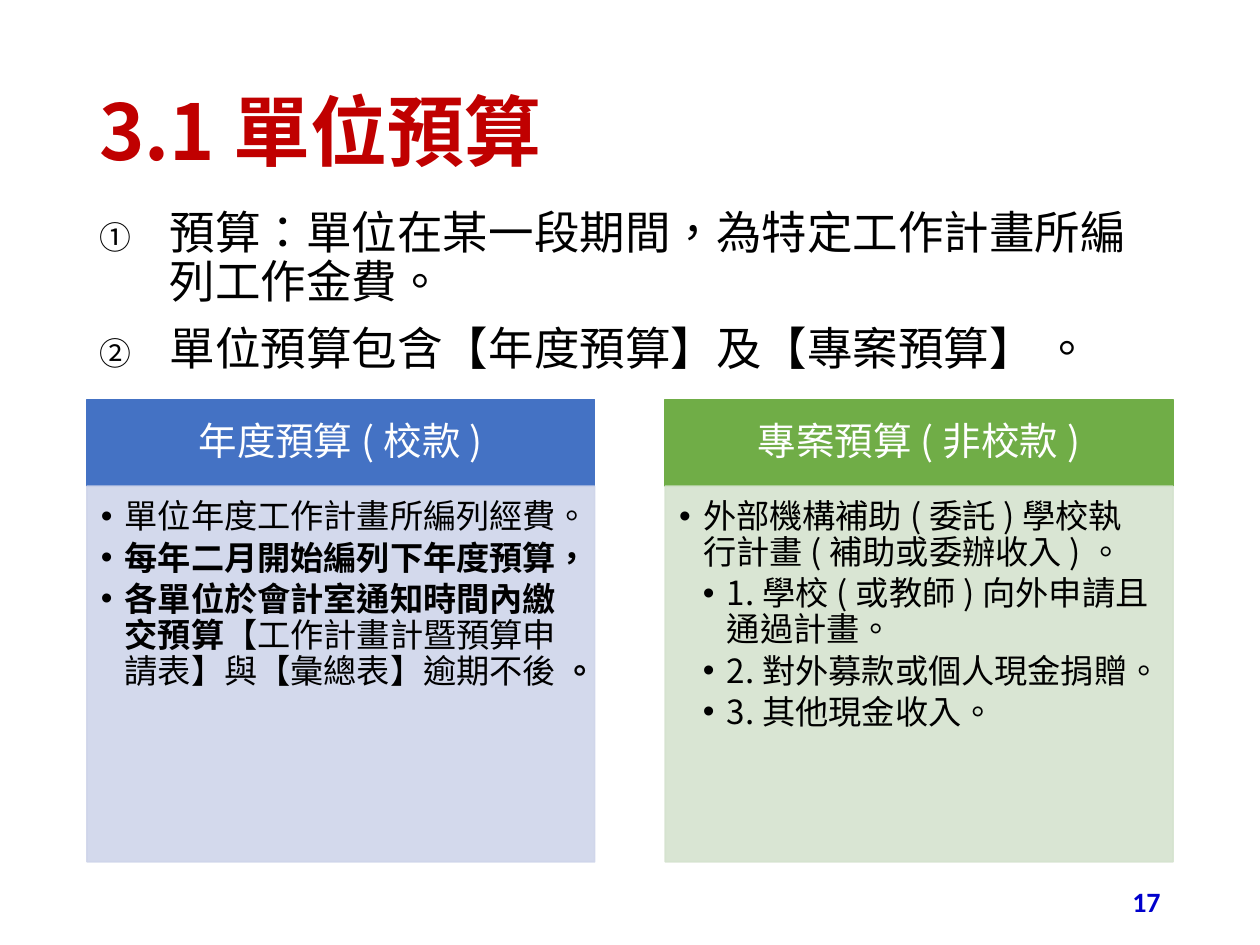
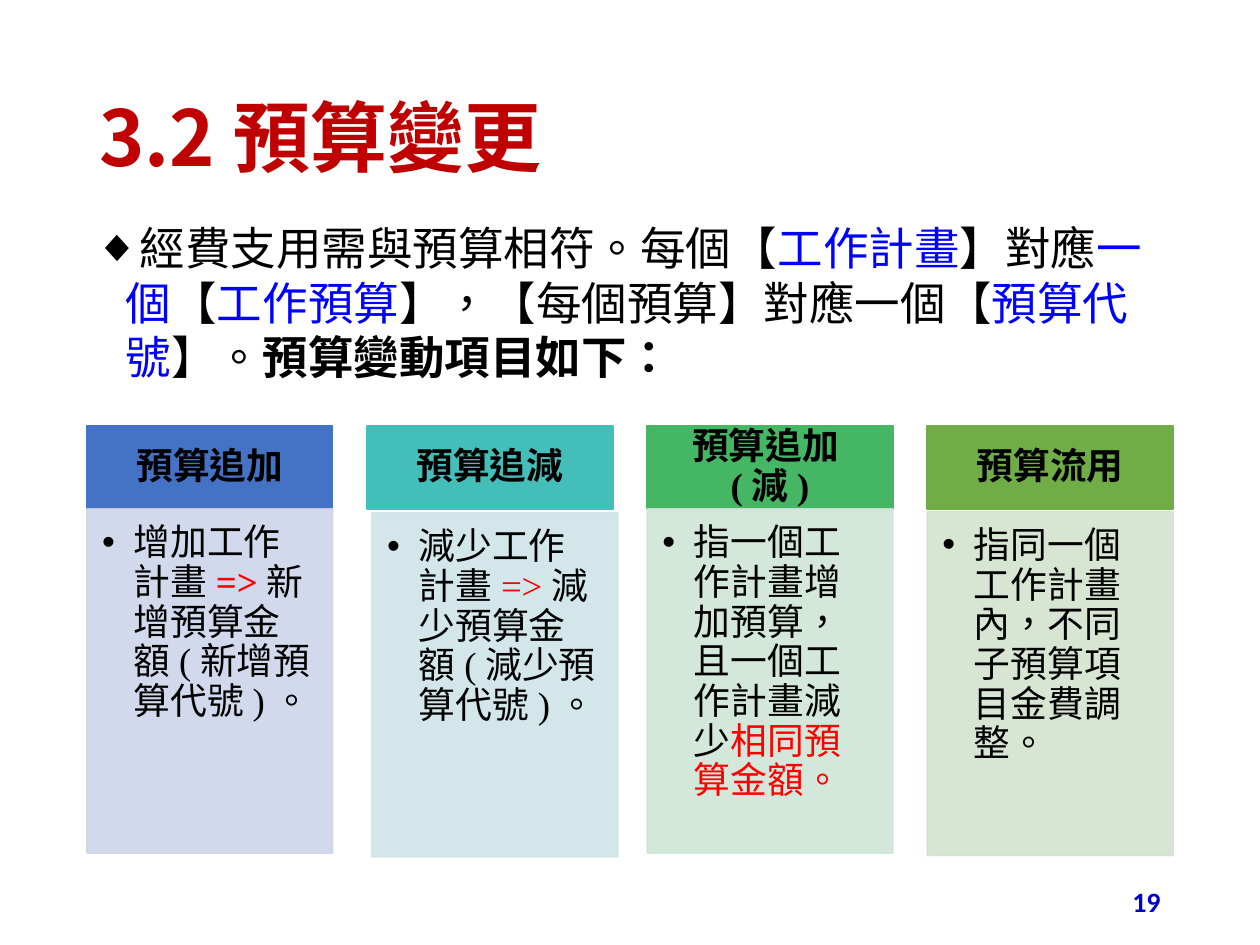
from dataclasses import dataclass

from lxml.etree import SubElement
from pptx import Presentation
from pptx.dml.color import RGBColor
from pptx.enum.lang import MSO_LANGUAGE_ID as Lang
from pptx.enum.shapes import MSO_SHAPE as Shape
from pptx.enum.text import MSO_ANCHOR as Anchor, PP_ALIGN as Align
from pptx.oxml.ns import qn
from pptx.util import Inches, Pt


@dataclass(frozen=True)
class Theme:
    cjk: str = "Noto Sans CJK SC"
    sans: str = "Arial"
    serif: str = "Times New Roman"
    number_font: str = "Calibri"
    title: str = "C00000"
    number: str = "0000CC"
    ink: str = "000000"
    white: str = "FFFFFF"
    term: str = "0000FF"
    alert: str = "FF0000"
    title_size: int = 44
    intro_size: int = 26
    number_size: int = 16
    left: float = 0.69
    width: float = 8.62


T = Theme()

# A run is plain text or (text, style); a style may set color, bold and font.
TERM = {"color": T.term}
ALERT = {"color": T.alert}
BOLD = {"bold": True}
OPEN = ("【", {"font": T.serif})
CLOSE = ("】", {"font": T.serif})

SLIDES = [
    {
        "title": "3.1單位預算", "title_top": 0.35, "number": "17",
        "intro": [
            ["預算：單位在某一段期間，為特定工作計畫所編列工作金費。"],
            ["單位預算包含【年度預算】及【專案預算】 。"],
        ],
        "intro_box": (0.69, 1.62, 8.62, 1.4),
        "intro_style": {"bullet": "circleNumWdWhitePlain", "indent": 0.56,
                        "spacing": 0.9, "before": 10},
        "cards": {
            "top": 3.17, "width": 4.03, "head_height": 0.69, "body_height": 2.98,
            "head_inset": (0.17, 0.1, 0.17, 0.1),
            "body_inset": (0.11, 0.11, 0.15, 0.17),
            "head_style": {"size": 22, "font": T.cjk, "color": T.white},
            "body_style": {"size": 19, "font": T.cjk, "indent": 0.19},
            "items": [
                {"head": "年度預算(校款)", "fill": "4472C4", "tint": "CFD5EA",
                 "body": [
                     (0, ["單位年度工作計畫所編列經費。"]),
                     (0, [("每年二月開始編列下年度預算，", BOLD)]),
                     (0, [("各單位於會計室通知時間內繳交預算", BOLD),
                          "【工作計畫計暨預算申請表】與【彙總表】逾期不後 ",
                          ("。", BOLD)]),
                 ]},
                {"head": "專案預算(非校款)", "fill": "70AD47", "tint": "D5E3CF",
                 "body": [
                     (0, ["外部機構補助(委託)學校執行計畫(補助或委辦收入)。"]),
                     (1, ["1.學校(或教師)向外申請且通過計畫。"]),
                     (1, ["2.對外募款或個人現金捐贈。"]),
                     (1, ["3.其他現金收入。"]),
                 ]},
            ],
        },
    },
    {
        "title": "3.2預算變更", "title_top": 0.4, "number": "19",
        "intro": [[
            "經費支用需與預算相符。每個", OPEN, ("工作計畫", TERM), CLOSE, "對應",
            ("一個", TERM), OPEN, ("工作預算", TERM), CLOSE, "，",
            OPEN, "每個預算", CLOSE, "對應一個",
            OPEN, ("預算代號", TERM), CLOSE, "。", ("預算變動項目如下：", BOLD),
        ]],
        "intro_box": (0.65, 1.7, 8.62, 1.26),
        "intro_style": {"bullet": "◆", "indent": 0.25, "after": 6},
        "cards": {
            "top": 3.38, "width": 1.95, "head_height": 0.66, "body_height": 2.73,
            "head_inset": (0.16, 0.09, 0.16, 0.09),
            "body_inset": (0.12, 0.12, 0.16, 0.18),
            "head_style": {"size": 21, "font": T.serif, "bold": True},
            "body_style": {"size": 21, "font": T.serif, "indent": 0.25},
            "items": [
                {"head": "預算追加", "fill": "4472C4", "tint": "CFD5EA",
                 "body": [(0, ["增加工作計畫", ("=>", ALERT | BOLD),
                               "新增預算金額(新增預算代號)。"])]},
                {"head": "預算追減", "fill": "43BEB9", "tint": "CFE5E8",
                 "nudge": (0.04, 0.03),
                 "body": [(0, ["減少工作計畫", ("=>", ALERT),
                               "減少預算金額(減少預算代號)。"])]},
                {"head": "預算追加(減)", "fill": "45B664", "tint": "CFE5D8",
                 "body": [(0, ["指一個工作計畫增加預算，且一個工作計畫減少",
                               ("相同預算金額。", ALERT)])]},
                {"head": "預算流用", "fill": "70AD47", "tint": "D5E3CF",
                 "nudge": (0, 0.02),
                 "body": [(0, ["指同一個工作計畫內，不同子預算項目金費調整。"])]},
            ],
        },
    },
]


def rgb(color):
    return RGBColor.from_string(color)


def add_bullet(paragraph, bullet, indent, level):
    props = paragraph._p.get_or_add_pPr()
    props.set("marL", str(Inches(indent * (level + 1))))
    props.set("indent", str(-Inches(indent)))
    if len(bullet) > 1:
        SubElement(props, qn("a:buSzPct")).set("val", "70000")
        SubElement(props, qn("a:buFont")).set("typeface", T.sans)
        SubElement(props, qn("a:buAutoNum")).set("type", bullet)
    else:
        SubElement(props, qn("a:buFont")).set("typeface", T.sans)
        SubElement(props, qn("a:buChar")).set("char", bullet)


def write(paragraph, runs, size, font, color=T.ink, bold=None, align=Align.LEFT,
          bullet=None, indent=0, level=0, spacing=None, before=0, after=0):
    if bullet:
        add_bullet(paragraph, bullet, indent, level)
    paragraph.level = level
    paragraph.alignment = align
    paragraph.line_spacing = spacing
    paragraph.space_before, paragraph.space_after = Pt(before), Pt(after)

    styles = [{} if isinstance(run, str) else run[1] for run in runs]
    if all(style.get("bold") for style in styles):
        bold = True
    base = paragraph.font
    base.size, base.name, base.bold = Pt(size), font, bold
    base.color.rgb = rgb(color)
    SubElement(base._element, qn("a:ea")).set("typeface", T.cjk)

    for content, style in zip(runs, styles):
        run = paragraph.add_run()
        run.text = content if isinstance(content, str) else content[0]
        run.font.language_id = Lang.TRADITIONAL_CHINESE
        if "font" in style:
            run.font.name = style["font"]
        if "color" in style:
            run.font.color.rgb = rgb(style["color"])
        if "bold" in style and not bold:
            run.font.bold = True


def fill_frame(frame, paragraphs, anchor=Anchor.TOP, inset=(0.1, 0.05, 0.1, 0.05)):
    """Write (runs, style) pairs into a text frame, one paragraph each."""
    frame.word_wrap = True
    frame.vertical_anchor = anchor
    (frame.margin_left, frame.margin_top,
     frame.margin_right, frame.margin_bottom) = map(Inches, inset)
    for i, (runs, style) in enumerate(paragraphs):
        paragraph = frame.add_paragraph() if i else frame.paragraphs[0]
        write(paragraph, runs, **(style if i else style | {"before": 0}))


def add_text(slide, box, paragraphs, anchor=Anchor.TOP):
    frame = slide.shapes.add_textbox(*map(Inches, box)).text_frame
    fill_frame(frame, paragraphs, anchor)


def add_panel(slide, box, color, opacity=100):
    panel = slide.shapes.add_shape(Shape.RECTANGLE, *map(Inches, box))
    panel.shadow.inherit = False
    panel.fill.solid()
    panel.fill.fore_color.rgb = panel.line.color.rgb = rgb(color)
    panel.line.width = Pt(1)
    if opacity < 100:
        for tone in list(panel._element.spPr.iter(qn("a:srgbClr"))):
            SubElement(tone, qn("a:alpha")).set("val", str(opacity * 1000))
    return panel.text_frame


def add_cards(slide, cards):
    items, width = cards["items"], cards["width"]
    pitch = (T.width - width) / (len(items) - 1)
    body_top = cards["top"] + cards["head_height"]
    head_style = cards["head_style"] | {"align": Align.CENTER, "spacing": 0.9}
    body_style = cards["body_style"] | {"bullet": "•", "spacing": 0.9, "after": 3}
    for i, card in enumerate(items):
        left = T.left + i * pitch
        dx, dy = card.get("nudge", (0, 0))
        head = add_panel(slide, (left, cards["top"], width, cards["head_height"]),
                         card["fill"])
        fill_frame(head, [([card["head"]], head_style)], Anchor.MIDDLE,
                   cards["head_inset"])
        body = add_panel(slide, (left + dx, body_top + dy, width, cards["body_height"]),
                         card["tint"], opacity=90)
        fill_frame(body, [(runs, body_style | {"level": level})
                          for level, runs in card["body"]],
                   inset=cards["body_inset"])


def add_slide(deck, content):
    slide = deck.slides.add_slide(deck.slide_layouts[6])
    title_style = {"size": T.title_size, "font": T.cjk, "color": T.title,
                   "bold": True, "spacing": 0.9}
    intro_style = {"size": T.intro_size, "font": T.sans} | content["intro_style"]
    number_style = {"size": T.number_size, "font": T.number_font, "color": T.number,
                    "bold": True, "align": Align.RIGHT}
    add_text(slide, (T.left, content["title_top"], T.width, 1.45),
             [([content["title"]], title_style)], Anchor.MIDDLE)
    add_text(slide, content["intro_box"],
             [(runs, intro_style) for runs in content["intro"]])
    add_text(slide, (7.06, 6.95, 2.25, 0.4),
             [([content["number"]], number_style)], Anchor.MIDDLE)
    add_cards(slide, content["cards"])


def main():
    deck = Presentation()
    deck.slide_width, deck.slide_height = Inches(10), Inches(7.5)
    for content in SLIDES:
        add_slide(deck, content)
    deck.save("out.pptx")


if __name__ == "__main__":
    main()
